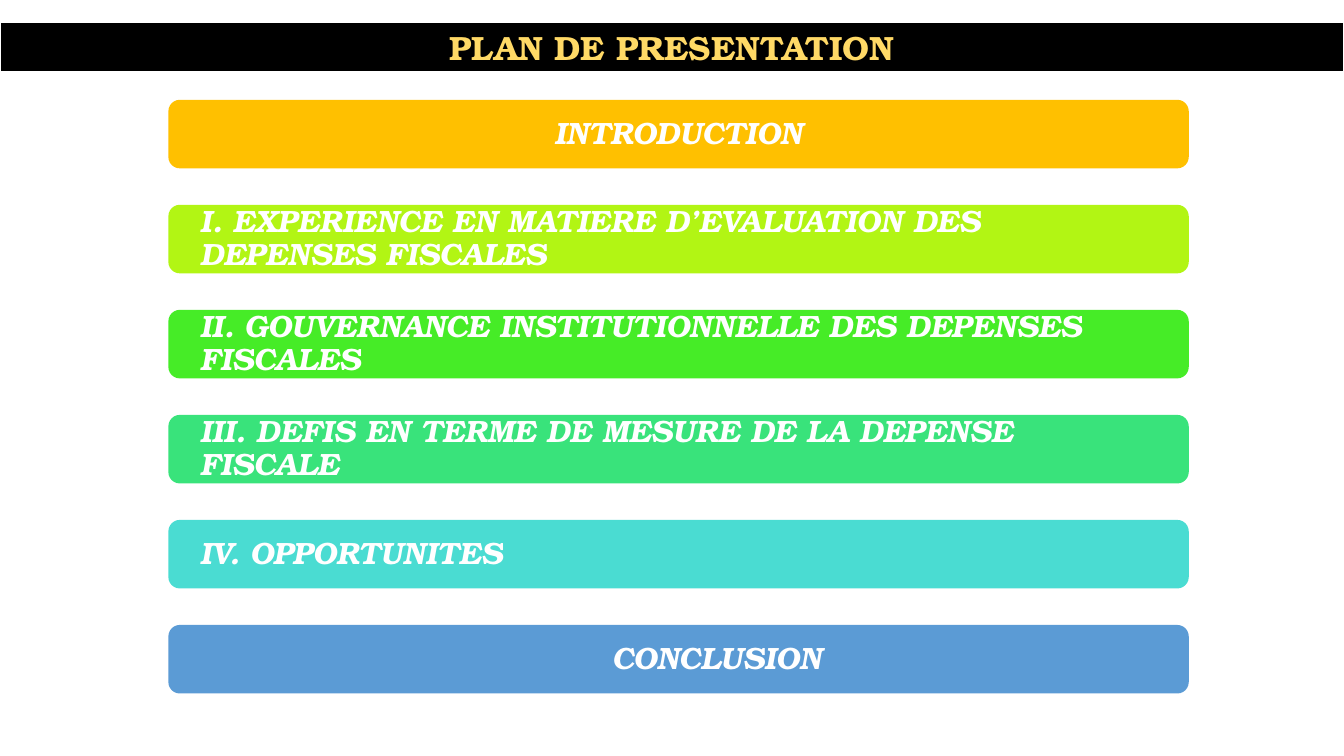
from pptx import Presentation, util as u
from pptx.dml.color import RGBColor
from pptx.enum import shapes, text

FONT = "TeX Gyre Bonum"
WHITE = RGBColor(0xFF, 0xFF, 0xFF)
BLACK = RGBColor(0x00, 0x00, 0x00)
GOLD = RGBColor(0xFF, 0xD9, 0x66)
ORANGE = RGBColor(0xFF, 0xC0, 0x00)
LIME = RGBColor(0xB2, 0xF5, 0x14)
GREEN = RGBColor(0x46, 0xEC, 0x27)
EMERALD = RGBColor(0x39, 0xE3, 0x7B)
TURQUOISE = RGBColor(0x4A, 0xDC, 0xD2)
BLUE = RGBColor(0x5B, 0x9B, 0xD5)

LEFT, CENTER = text.PP_ALIGN.LEFT, text.PP_ALIGN.CENTER
BAR_HEIGHT = 0.68
SIDE_INSET = 0.28

# Wording, colour, alignment, left and right inset
SECTIONS = [
    ("INTRODUCTION", ORANGE, CENTER, SIDE_INSET, SIDE_INSET),
    ("I. EXPERIENCE EN MATIERE D’EVALUATION DES DEPENSES FISCALES",
     LIME, LEFT, SIDE_INSET, SIDE_INSET),
    ("II. GOUVERNANCE INSTITUTIONNELLE DES DEPENSES FISCALES",
     GREEN, LEFT, SIDE_INSET, SIDE_INSET),
    ("III. DEFIS EN TERME DE MESURE DE LA DEPENSE FISCALE",
     EMERALD, LEFT, SIDE_INSET, SIDE_INSET),
    ("IV. OPPORTUNITES", TURQUOISE, LEFT, SIDE_INSET, SIDE_INSET),
    ("CONCLUSION", BLUE, CENTER, 0.82, 0.06),
]


def set_all(target, **values):
    for name, value in values.items():
        setattr(target, name, value)


def write(shape, wording, align, colour, **font):
    frame = shape.text_frame
    set_all(frame, word_wrap=True, vertical_anchor=text.MSO_ANCHOR.MIDDLE)
    paragraph = frame.paragraphs[0]
    paragraph.alignment = align
    run = paragraph.add_run()
    run.text = wording
    set_all(run.font, name=FONT, bold=True, **font)
    run.font.color.rgb = colour
    return paragraph


def fill(shape, colour):
    shape.fill.solid()
    shape.fill.fore_color.rgb = colour


def title_band(slide, left, top, width, height):
    band = slide.shapes.title
    set_all(band, left=u.Inches(left), top=u.Inches(top),
            width=u.Inches(width), height=u.Inches(height))
    fill(band, BLACK)
    band.line.color.rgb = WHITE
    band.line.width = u.Pt(1.5)
    write(band, "PLAN DE PRESENTATION", CENTER, GOLD, size=u.Pt(24))
    band.text_frame.auto_size = text.MSO_AUTO_SIZE.NONE


def section_bars(slide, left, top, width, height):
    pitch = (height - BAR_HEIGHT) / (len(SECTIONS) - 1)
    for row, (wording, colour, align, inset_left, inset_right) in enumerate(SECTIONS):
        bar = slide.shapes.add_shape(
            shapes.MSO_SHAPE.ROUNDED_RECTANGLE, u.Inches(left),
            u.Inches(top + row * pitch), u.Inches(width), u.Inches(BAR_HEIGHT))
        bar.shadow.inherit = False
        fill(bar, colour)
        bar.line.fill.background()
        set_all(bar.text_frame, margin_left=u.Inches(inset_left),
                margin_right=u.Inches(inset_right), margin_top=0, margin_bottom=0)
        paragraph = write(bar, wording, align, WHITE, size=u.Pt(22), italic=True)
        paragraph.line_spacing = 0.9


def main():
    deck = Presentation()
    set_all(deck, slide_width=u.Inches(13.33), slide_height=u.Inches(7.5))
    slide = deck.slides.add_slide(deck.slide_layouts[5])
    title_band(slide, 0, 0.22, 13.33, 0.5)
    section_bars(slide, 1.67, 0.99, 10.12, 5.89)
    deck.save("out.pptx")


if __name__ == "__main__":
    main()
